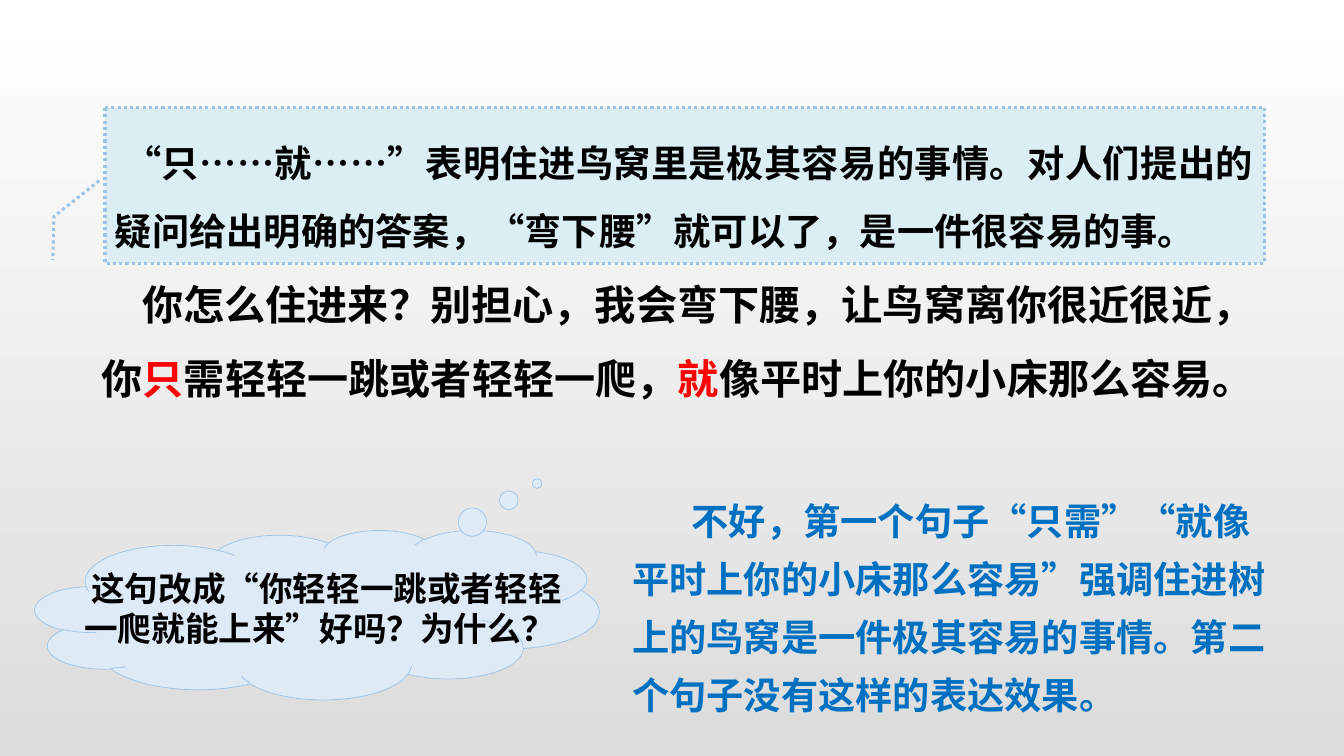
import pptx
import pptx.util
import pptx.dml.color
import pptx.enum.dml
import pptx.enum.lang
import pptx.enum.shapes
import pptx.enum.text
import pptx.oxml
import pptx.oxml.ns

Pt = pptx.util.Pt
RGBColor = pptx.dml.color.RGBColor
ALIGN = pptx.enum.text.PP_ALIGN
SHAPE = pptx.enum.shapes.MSO_SHAPE

FONT = "Noto Sans CJK SC"
WHITE = RGBColor(0xFF, 0xFF, 0xFF)
GREY = RGBColor(0xDC, 0xDC, 0xDC)
BLACK = RGBColor(0, 0, 0)
RED = RGBColor(0xFF, 0, 0)
ANSWER_BLUE = RGBColor(0, 0x70, 0xC0)
OUTLINE_BLUE = RGBColor(0x9D, 0xC3, 0xE6)
NOTE_FILL = RGBColor(0xDB, 0xEE, 0xF4)
CLOUD_FILL = RGBColor(0xDE, 0xEB, 0xF7)


def paint_background(page):
    fill = page.background.fill
    fill.gradient()
    fill.gradient_angle = 270
    for stop, color in zip(fill.gradient_stops, (WHITE, GREY)):
        stop.color.rgb = color


def write_text(box, spans, size, indent=0, **para_format):
    """Fill the box with one paragraph of (text, colour) spans."""
    box.text_frame.word_wrap = True
    para = box.text_frame.paragraphs[0]
    for name, value in para_format.items():
        setattr(para, name, value)
    if indent:
        para_properties = para._p.get_or_add_pPr()
        para_properties.set("marL", "0")
        para_properties.set("indent", str(Pt(indent)))
    font_format = {
        "name": FONT,
        "size": Pt(size),
        "bold": True,
        "language_id": pptx.enum.lang.MSO_LANGUAGE_ID.SIMPLIFIED_CHINESE,
    }
    for text, color in spans:
        span = para.add_run()
        span.text = text
        for name, value in font_format.items():
            setattr(span.font, name, value)
        span.font.color.rgb = color
        east_asian = pptx.oxml.parse_xml(
            f'<a:ea {pptx.oxml.ns.nsdecls("a")} typeface="{FONT}"/>'
        )
        span.font._element.find(pptx.oxml.ns.qn("a:latin")).addnext(east_asian)


def add_text(shapes, place, spans, size, **text_format):
    box = shapes.add_textbox(*map(Pt, place))
    write_text(box, spans, size, **text_format)


def add_callout(shapes, kind, place, adjustments, fill, line_format):
    callout = shapes.add_shape(kind, *map(Pt, place))
    callout.shadow.inherit = False
    for index, value in enumerate(adjustments):
        callout.adjustments[index] = value
    callout.fill.solid()
    callout.fill.fore_color.rgb = fill
    callout.line.color.rgb = OUTLINE_BLUE
    for name, value in line_format.items():
        setattr(callout.line, name, value)
    return callout


def main():
    deck = pptx.Presentation()
    deck.slide_width, deck.slide_height = Pt(960), Pt(540)
    page = deck.slides.add_slide(deck.slide_layouts[6])
    paint_background(page)

    sentence = [
        ("你怎么住进来？别担心，我会弯下腰，让鸟窝离你很近很近，你", BLACK),
        ("只", RED),
        ("需轻轻一跳或者轻轻一爬，", BLACK),
        ("就", RED),
        ("像平时上你的小床那么容易。", BLACK),
    ]
    add_text(page.shapes, (65.5, 178.5, 810, 172), sentence, 29.4,
             indent=29, line_spacing=1.5)

    note = add_callout(
        page.shapes, SHAPE.LINE_CALLOUT_2, (75, 77, 828.5, 111),
        (0.47, -0.005, 0.7, -0.044, 0.98, -0.045), NOTE_FILL,
        {"width": Pt(2.25),
         "dash_style": pptx.enum.dml.MSO_LINE_DASH_STYLE.ROUND_DOT})
    note_text = (" “只……就……”表明住进鸟窝里是极其容易的事情。对人们提出的"
                 "疑问给出明确的答案，“弯下腰”就可以了，是一件很容易的事。")
    write_text(note, [(note_text, BLACK)], 26.6,
               alignment=ALIGN.JUSTIFY, line_spacing=1.5)

    answer = ("不好，第一个句子“只需”“就像平时上你的小床那么容易”强调住进树"
              "上的鸟窝是一件极其容易的事情。第二个句子没有这样的表达效果。")
    add_text(page.shapes, (444.5, 342.5, 476, 176), [(answer, ANSWER_BLUE)],
             26.6, indent=42.5, line_spacing=1.3)

    question = page.shapes.add_group_shape().shapes
    add_callout(question, SHAPE.CLOUD_CALLOUT, (25, 378.5, 403, 121),
                (0.39, -0.774), CLOUD_FILL, {"width": Pt(0.5)})
    question_text = "这句改成“你轻轻一跳或者轻轻一爬就能上来”好吗？为什么？"
    add_text(question, (44, 402, 368.5, 65.5), [(question_text, BLACK)], 24,
             indent=10, alignment=ALIGN.CENTER)

    deck.save("out.pptx")


if __name__ == "__main__":
    main()
